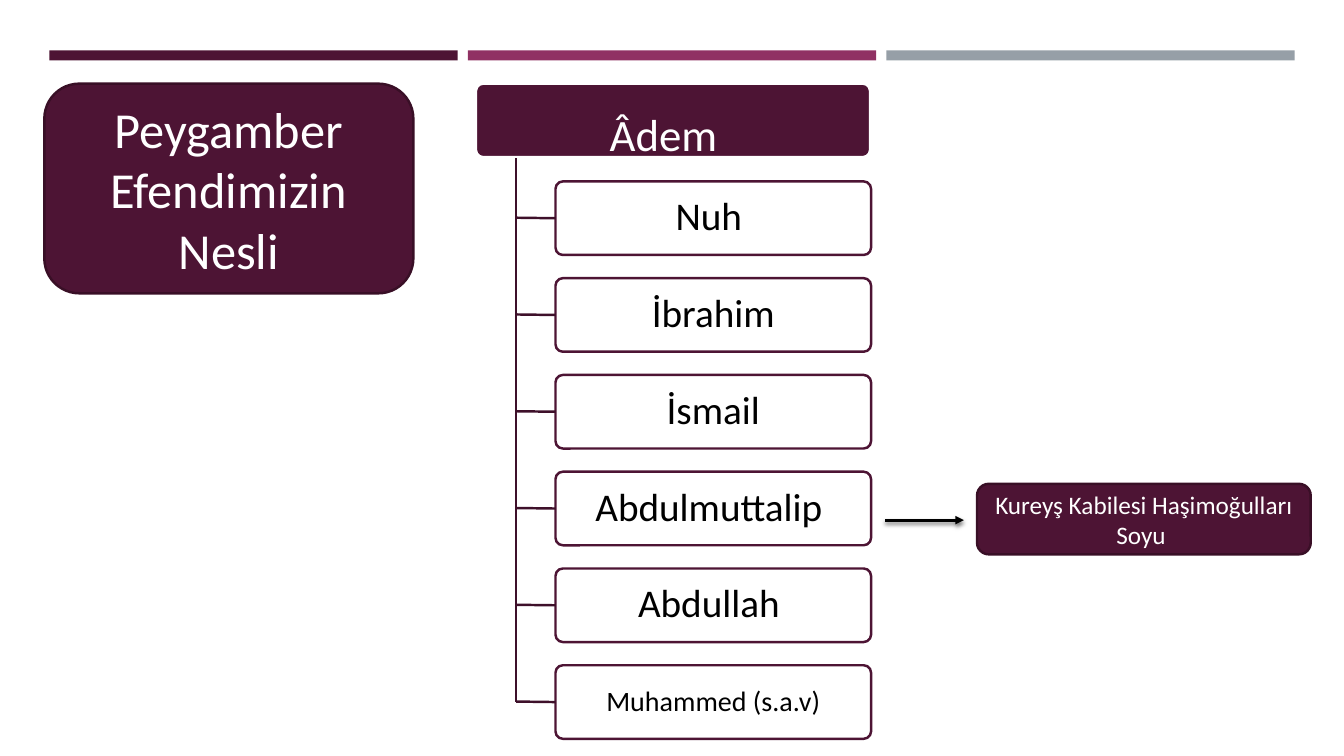
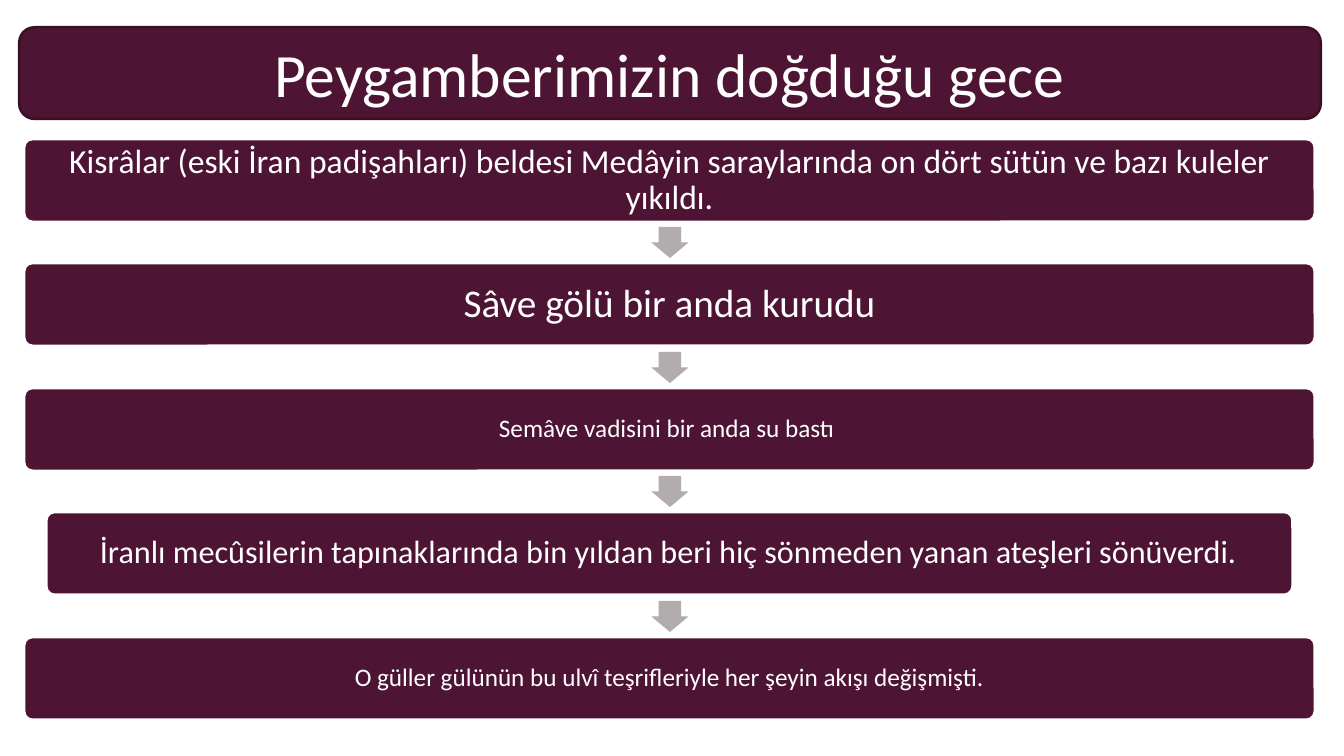
from dataclasses import dataclass

from lxml import etree
from pptx import Presentation
from pptx import util as u
from pptx.dml.color import RGBColor
from pptx.enum import shapes, text
from pptx.oxml import ns

EMU_PER_PX = 9144


@dataclass(frozen=True)
class Theme:
    """Colours, font and type sizes shared by the slides."""

    plum: str = "4D1434"
    plum_edge: str = "390F26"
    branch: str = "3E102A"
    magenta: str = "903163"
    slate: str = "969FA7"
    arrow: str = "B2ACAE"
    white: str = "FFFFFF"
    black: str = "000000"
    font: str = "Calibri"
    line: float = 1.75
    banner: int = 44
    title: int = 36
    root: int = 32
    large: int = 28
    medium: int = 24
    fitted: int = 23
    name: int = 20
    small: int = 18


THEME = Theme()
SHAPE = shapes.MSO_SHAPE
DIAGRAM_CORNER = 0.1
DIAGRAM_SPACING = 0.9


def px(length):
    """Turn whole pixels, 100 to the inch, into EMU."""
    return u.Emu(length * EMU_PER_PX)


def rgb(colour):
    """Turn a hex string into a colour."""
    return RGBColor.from_string(colour)


def add_block(slide, kind, frame, fill, edge=None, adjustments=()):
    """Add a filled preset shape with an optional outline."""
    block = slide.shapes.add_shape(kind, *map(px, frame))
    block.shadow.inherit = False
    block.fill.solid()
    block.fill.fore_color.rgb = rgb(fill)
    if edge:
        block.line.color.rgb = rgb(edge)
        block.line.width = u.Pt(THEME.line)
    else:
        block.line.fill.background()
    for index, value in enumerate(adjustments):
        block.adjustments[index] = value
    return block


def write(block, wording, size, colour=THEME.white, insets=(10, 5, 10, 5), spacing=None):
    """Centre wording in a block."""
    frame = block.text_frame
    frame.word_wrap = True
    frame.vertical_anchor = text.MSO_ANCHOR.MIDDLE
    frame.margin_left, frame.margin_top, frame.margin_right, frame.margin_bottom = map(px, insets)
    frame.text = wording
    paragraph = frame.paragraphs[0]
    paragraph.alignment = text.PP_ALIGN.CENTER
    paragraph.line_spacing = spacing
    font = paragraph.runs[0].font
    font.name, font.size = THEME.font, u.Pt(size)
    font.color.rgb = rgb(colour)


def add_title(slide, frame, wording, size):
    """Add a dark rounded caption with a darker outline."""
    caption = add_block(slide, SHAPE.ROUNDED_RECTANGLE, frame, THEME.plum, THEME.plum_edge)
    write(caption, wording, size)


def add_node(slide, frame, wording, size, fill=THEME.plum, edge=THEME.white,
             colour=THEME.white, insets=(8, 4, 8, 4)):
    """Add one box of a diagram."""
    node = add_block(slide, SHAPE.ROUNDED_RECTANGLE, frame, fill, edge, [DIAGRAM_CORNER])
    write(node, wording, size, colour, insets, DIAGRAM_SPACING)
    return node


def add_line(slide, start, end, colour, width):
    """Add a straight connector without its default shadow."""
    line = slide.shapes.add_connector(
        shapes.MSO_CONNECTOR.STRAIGHT, *map(px, start), *map(px, end))
    line.line.color.rgb = rgb(colour)
    line.line.width = u.Pt(width)
    etree.SubElement(line._element.spPr, ns.qn("a:effectLst"))
    return line


def add_shadowed_arrow(slide, start, end):
    """Add a black arrow with a soft shadow below it."""
    arrow = add_line(slide, start, end, THEME.black, 2)
    etree.SubElement(arrow.line._get_or_add_ln(), ns.qn("a:tailEnd"), type="triangle")
    effects = arrow._element.spPr.find(ns.qn("a:effectLst"))
    shadow = etree.SubElement(
        effects, ns.qn("a:outerShdw"), blurRad=str(u.Pt(3)), dist=str(u.Pt(2)),
        dir="5400000", rotWithShape="0")
    tint = etree.SubElement(shadow, ns.qn("a:srgbClr"), val=THEME.black)
    etree.SubElement(tint, ns.qn("a:alpha"), val="55000")


def add_bands(slide):
    """Add the three coloured bands along the top."""
    for index, colour in enumerate((THEME.plum, THEME.magenta, THEME.slate)):
        add_block(slide, SHAPE.RECTANGLE, (49 + index * 415, 50, 405, 10), colour)


def add_lineage(slide, ancestor, descendants):
    """Add the ancestor and the descendants hanging from one trunk."""
    trunk_x, node_x, first_y, pitch, height = 512, 551, 180, 96, 73
    add_node(slide, (472, 83, 391, height), ancestor, THEME.root, insets=(7, 32, 26, 0))
    middles = [first_y + row * pitch + height // 2 for row in range(len(descendants))]
    add_line(slide, (trunk_x, 157), (trunk_x, middles[-1]), THEME.branch, THEME.line)
    for middle, (name, size) in zip(middles, descendants):
        node = add_node(slide, (node_x, middle - height // 2, 313, height), name, size,
                        THEME.white, THEME.plum, THEME.black)
        branch = add_line(slide, (trunk_x, middle), (node_x, middle), THEME.branch, THEME.line)
        branch.end_connect(node, 1)


def add_steps(slide, steps):
    """Add centred boxes from top to bottom with an arrow between each pair."""
    centre, first_y, height = 664, 138, 82
    for index, (wording, size, width) in enumerate(steps):
        top = first_y + index * 247 // 2
        if index:
            add_block(slide, SHAPE.DOWN_ARROW, (centre - 18, top - 36, 37, 31),
                      THEME.arrow, adjustments=(0.6, 0.5))
        add_node(slide, (centre - width // 2, top, width, height), wording, size,
                 insets=(12, 4, 12, 4))


def build_lineage_slide(slide):
    """Build the slide on the family line."""
    add_bands(slide)
    add_title(slide, (44, 83, 366, 208), "Peygamber Efendimizin Nesli", THEME.title)
    add_lineage(slide, "Âdem", (
        ("Nuh ", THEME.large),
        ("İbrahim", THEME.large),
        (" İsmail ", THEME.large),
        ("Abdulmuttalip ", THEME.large),
        ("Abdullah ", THEME.large),
        ("Muhammed (s.a.v)", THEME.name),
    ))
    add_shadowed_arrow(slide, (878, 516), (956, 516))
    add_title(slide, (969, 480, 331, 70), "Kureyş Kabilesi Haşimoğulları Soyu ", THEME.small)


def build_night_slide(slide):
    """Build the slide on the night of the birth."""
    add_title(slide, (19, 27, 1291, 91), "Peygamberimizin doğduğu gece", THEME.banner)
    add_steps(slide, (
        ("Kisrâlar (eski İran padişahları) beldesi Medâyin saraylarında on dört sütün "
         "ve bazı kuleler yıkıldı.", THEME.medium, 1280),
        ("Sâve gölü bir anda kurudu", THEME.large, 1280),
        ("Semâve vadisini bir anda su bastı ", THEME.small, 1280),
        ("İranlı mecûsilerin tapınaklarında bin yıldan beri hiç sönmeden yanan "
         "ateşleri sönüverdi.", THEME.fitted, 1236),
        ("O güller gülünün bu ulvî teşrifleriyle her şeyin akışı değişmişti.",
         THEME.small, 1280),
    ))


def main():
    """Build and save the presentation."""
    deck = Presentation()
    deck.slide_width, deck.slide_height = px(1333), px(750)
    blank = deck.slide_layouts[6]
    for build in (build_lineage_slide, build_night_slide):
        build(deck.slides.add_slide(blank))
    deck.save("out.pptx")


if __name__ == "__main__":
    main()
